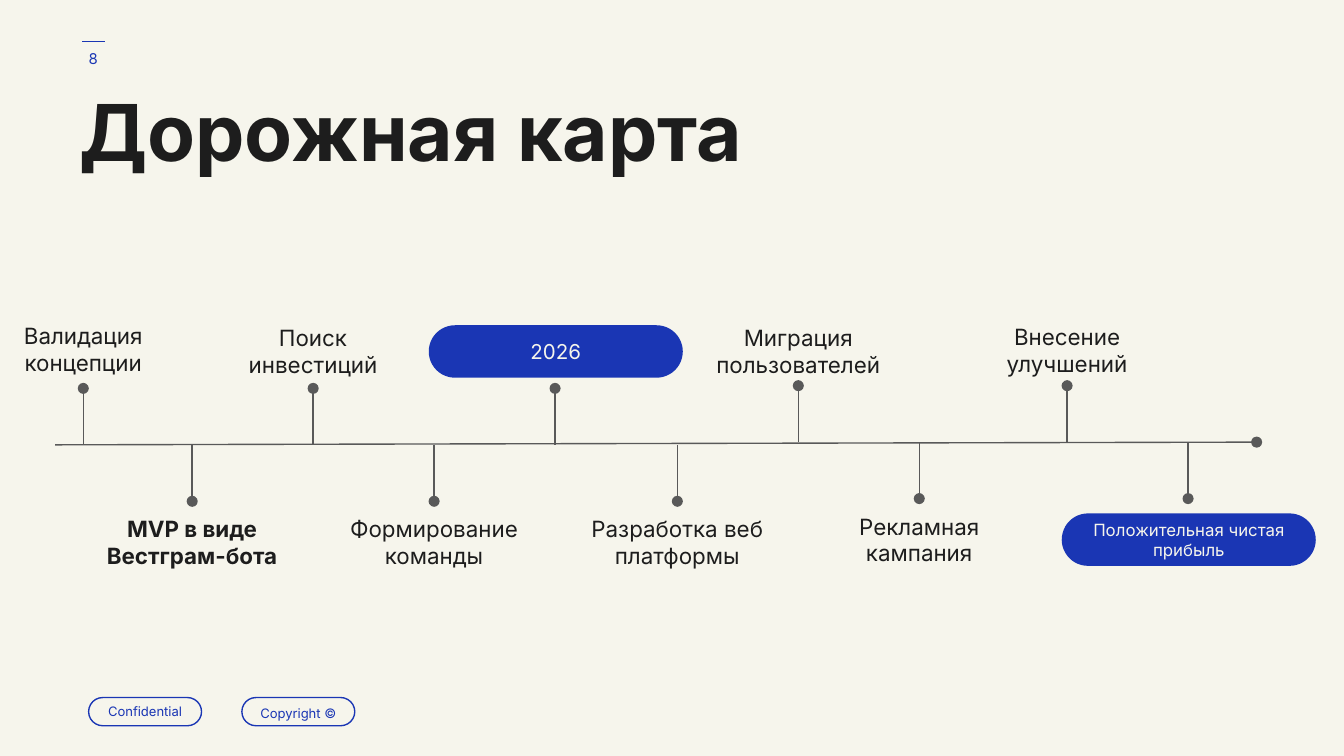
from lxml import etree
from pptx import Presentation
from pptx.dml.color import RGBColor
from pptx.enum.shapes import MSO_CONNECTOR as Connector, MSO_SHAPE as Shape
from pptx.enum.text import MSO_ANCHOR as Anchor, MSO_AUTO_SIZE as AutoSize, PP_ALIGN as Align
from pptx.oxml.ns import qn
from pptx.util import Inches, Pt

BLUE, CREAM, INK, GREY = "1A36B4", "F6F5EC", "1D1D1D", "595959"
STEM = 0.42

# x, axis height, side, label, label width, label top (labels above the axis)
MILESTONES = [
    (0.62, 3.31, "up", "Валидация концепции", 1.26, 2.29),
    (1.43, 3.31, "down", "MVP в виде\nВестграм-бота", 1.8, None),
    (2.33, 3.31, "up", "Поиск инвестиций", 1.26, 2.31),
    (3.23, 3.31, "down", "Формирование команды", 1.8, None),
    (4.13, 3.31, "up", None, None, None),
    (5.04, 3.31, "down", "Разработка веб платформы", 1.8, None),
    (5.94, 3.29, "up", "Миграция пользователей", 1.8, 2.31),
    (6.84, 3.29, "down", "Рекламная кампания", 1.8, None),
    (7.94, 3.29, "up", "Внесение улучшений", 1.8, 2.3),
    (8.84, 3.29, "down", None, None, None),
]
CURRENT_STEP = 1


def rgb(color):
    return RGBColor.from_string(color)


def write(shape, text, size, color, bold=False, align=Align.CENTER,
          anchor=Anchor.MIDDLE, spacing=None):
    frame = shape.text_frame
    frame.word_wrap = True
    frame.auto_size = AutoSize.NONE
    frame.vertical_anchor = anchor
    frame.margin_left = frame.margin_right = Inches(0.1)
    frame.margin_top = frame.margin_bottom = Inches(0.1)
    frame.text = text
    for paragraph in frame.paragraphs:
        paragraph.alignment = align
        if spacing:
            paragraph.line_spacing = spacing
        font = paragraph.font
        font.name, font.size, font.bold = "Inter", Pt(size), bold
        font.color.rgb = rgb(color)


def add_label(slide, box, text, size, color, bold=False):
    label = slide.shapes.add_textbox(*map(Inches, box))
    write(label, text, size, color, bold)


def add_line(slide, start, end, color, dot=False):
    line = slide.shapes.add_connector(Connector.STRAIGHT, *map(Inches, start + end))
    line.line.color.rgb = rgb(color)
    line.line.width = Pt(0.75)
    if dot:
        outline = line._element.spPr.find(qn("a:ln"))
        etree.SubElement(outline, qn("a:headEnd"), type="oval")
    etree.SubElement(line._element.spPr, qn("a:effectLst"))


def add_pill(slide, box, text, size, color, filled, spacing=None):
    pill = slide.shapes.add_shape(Shape.ROUNDED_RECTANGLE, *map(Inches, box))
    pill.adjustments[0] = 0.5
    pill.shadow.inherit = False
    if filled:
        pill.fill.solid()
        pill.fill.fore_color.rgb = rgb(BLUE)
        pill.line.fill.background()
    else:
        pill.fill.background()
        pill.line.color.rgb = rgb(BLUE)
        pill.line.width = Pt(0.75)
    write(pill, text, size, color, spacing=spacing)


def add_header(slide, left, top):
    # Page number under a short rule
    add_line(slide, (left + 0.32, top + 0.09), (left + 0.15, top + 0.09), BLUE)
    add_label(slide, (left, top, 0.47, 0.43), "8", 8, BLUE)
    # Title
    title = slide.shapes.title
    title.left, title.top = Inches(left + 0.03), Inches(top + 0.43)
    title.width, title.height = Inches(7.51), Inches(0.84)
    write(title, "Дорожная карта", 42, INK, True, Align.LEFT, Anchor.TOP, 0.8)


def add_timeline(slide, left, right):
    # Axis, rising slightly towards its dotted end
    add_line(slide, (right, 3.29), (left, 3.31), GREY, dot=True)
    # Milestones
    for step, (x, axis, side, text, width, top) in enumerate(MILESTONES):
        tip = axis - STEM if side == "up" else axis + STEM
        add_line(slide, (x, tip), (x, axis), GREY, dot=True)
        if text:
            box = (x - width / 2, top or tip, width, 0.61)
            add_label(slide, box, text, 12, INK, step == CURRENT_STEP)
    # Highlighted goals
    add_pill(slide, (3.19, 2.42, 1.89, 0.39), "2026", 11, CREAM, True)
    add_pill(slide, (7.9, 3.82, 1.89, 0.39), "Положительная чистая прибыль",
             9, CREAM, True)


def add_footer(slide, left, top):
    for i, (text, spacing) in enumerate([("Confidential", None), ("Copyright ©", 1.15)]):
        add_pill(slide, (left + i * 1.14, top, 0.84, 0.21), text, 7, BLUE, False, spacing)


def main():
    deck = Presentation()
    deck.slide_width = Inches(10)
    deck.slide_height = deck.slide_width * 9 // 16
    slide = deck.slides.add_slide(deck.slide_layouts[5])
    slide.background.fill.solid()
    slide.background.fill.fore_color.rgb = rgb(CREAM)
    add_header(slide, 0.46, 0.22)
    add_timeline(slide, 0.41, 9.35)
    add_footer(slide, 0.66, 5.19)
    deck.save("out.pptx")


if __name__ == "__main__":
    main()
